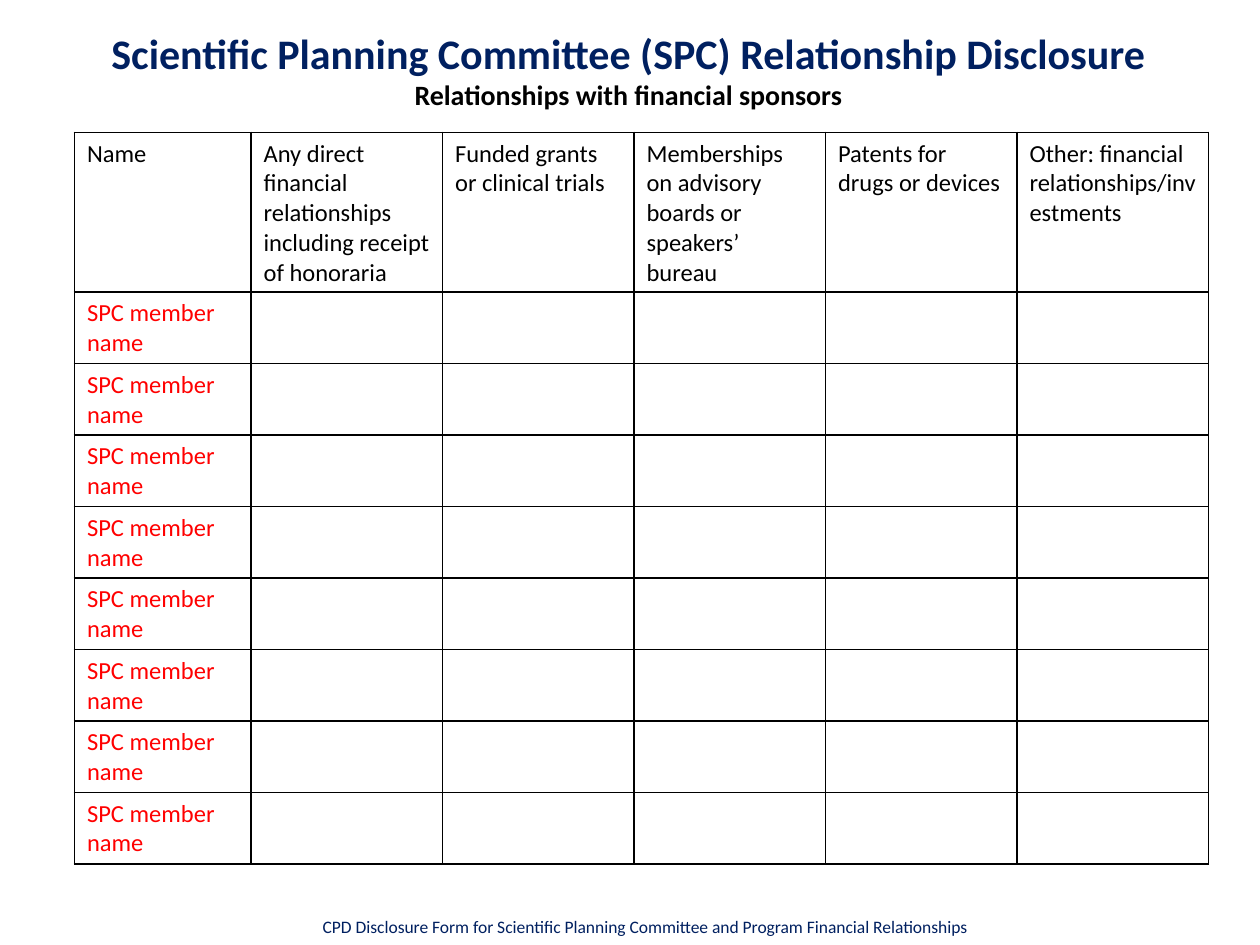
import dataclasses

import pptx
import pptx.dml.color
import pptx.enum.text
import pptx.oxml
import pptx.oxml.ns
import pptx.util

Cm = pptx.util.Cm
Pt = pptx.util.Pt
RGB = pptx.dml.color.RGBColor.from_string
ALIGN = pptx.enum.text.PP_ALIGN
ANCHOR = pptx.enum.text.MSO_ANCHOR
AUTO_SIZE = pptx.enum.text.MSO_AUTO_SIZE


@dataclasses.dataclass(frozen=True)
class Theme:
    font: str = "Calibri"
    navy: str = "002060"
    black: str = "000000"
    red: str = "FF0000"
    title: int = 24
    subtitle: int = 16
    body: int = 14
    footer: int = 10
    border: int = 1


THEME = Theme()
HEADERS = [
    "Name",
    "Any direct financial relationships including receipt of honoraria",
    "Funded grants or clinical trials",
    "Memberships on advisory boards or speakers’ bureau",
    "Patents for drugs or devices",
    "Other: financial relationships/investments",
]
MEMBER = "SPC member name"
MEMBER_COUNT = 8


def add_text(p, text, size=THEME.body, color=THEME.black, bold=False, align=None):
    r = p.add_run()
    r.text = text
    r.font.name = THEME.font
    r.font.size = Pt(size)
    r.font.bold = bold
    r.font.color.rgb = RGB(color)
    if align is not None:
        p.alignment = align


def add_title(s, title, subtitle):
    sp = s.shapes.title
    sp.left, sp.top, sp.width, sp.height = Cm(1.24), Cm(0.76), Cm(22.86), Cm(1.27)
    tf = sp.text_frame
    tf.auto_size = AUTO_SIZE.NONE
    tf.vertical_anchor = ANCHOR.MIDDLE
    p = tf.paragraphs[0]
    add_text(p, title, size=THEME.title, color=THEME.navy, bold=True, align=ALIGN.CENTER)
    p.add_line_break()
    add_text(p, subtitle, size=THEME.subtitle, bold=True)


def add_footer(s, text):
    sp = s.shapes.add_textbox(Cm(0.3), Cm(18.34), Cm(25.4), Cm(0.7))
    tf = sp.text_frame
    tf.word_wrap = True
    tf.auto_size = AUTO_SIZE.SHAPE_TO_FIT_TEXT
    add_text(tf.paragraphs[0], text, size=THEME.footer, color=THEME.navy, align=ALIGN.CENTER)


def set_borders(cell):
    tc_pr = cell._tc.get_or_add_tcPr()
    for i, side in enumerate(("lnL", "lnR", "lnT", "lnB")):
        tc_pr.insert(i, pptx.oxml.parse_xml(
            f'<a:{side} {pptx.oxml.ns.nsdecls("a")} w="{Pt(THEME.border)}">'
            f'<a:solidFill><a:srgbClr val="{THEME.black}"/></a:solidFill></a:{side}>'
        ))


def add_disclosure_table(s):
    rows, cols = MEMBER_COUNT + 1, len(HEADERS)
    table = s.shapes.add_table(
        rows, cols, Cm(1.5), Cm(2.67), Cm(22.86), Cm(14.73)
    ).table
    table.first_row = table.horz_banding = False
    for i, col in enumerate(table.columns):
        col.width = Cm(3.86 if i else 3.56)
    for i, row in enumerate(table.rows):
        row.height = Cm(1.44 if i else 3.22)
    for cell in table.iter_cells():
        cell.fill.background()
        set_borders(cell)
    for i, header in enumerate(HEADERS):
        add_text(table.cell(0, i).text_frame.paragraphs[0], header)
    for i in range(1, rows):
        add_text(table.cell(i, 0).text_frame.paragraphs[0], MEMBER, color=THEME.red)


def main():
    prs = pptx.Presentation()
    prs.slide_width, prs.slide_height = Cm(25.4), Cm(19.05)
    s = prs.slides.add_slide(prs.slide_layouts[5])
    add_title(
        s,
        "Scientific Planning Committee (SPC) Relationship Disclosure",
        "Relationships with financial sponsors",
    )
    add_footer(
        s,
        "CPD Disclosure Form for Scientific Planning Committee and Program Financial Relationships",
    )
    add_disclosure_table(s)
    prs.save("out.pptx")


if __name__ == "__main__":
    main()
